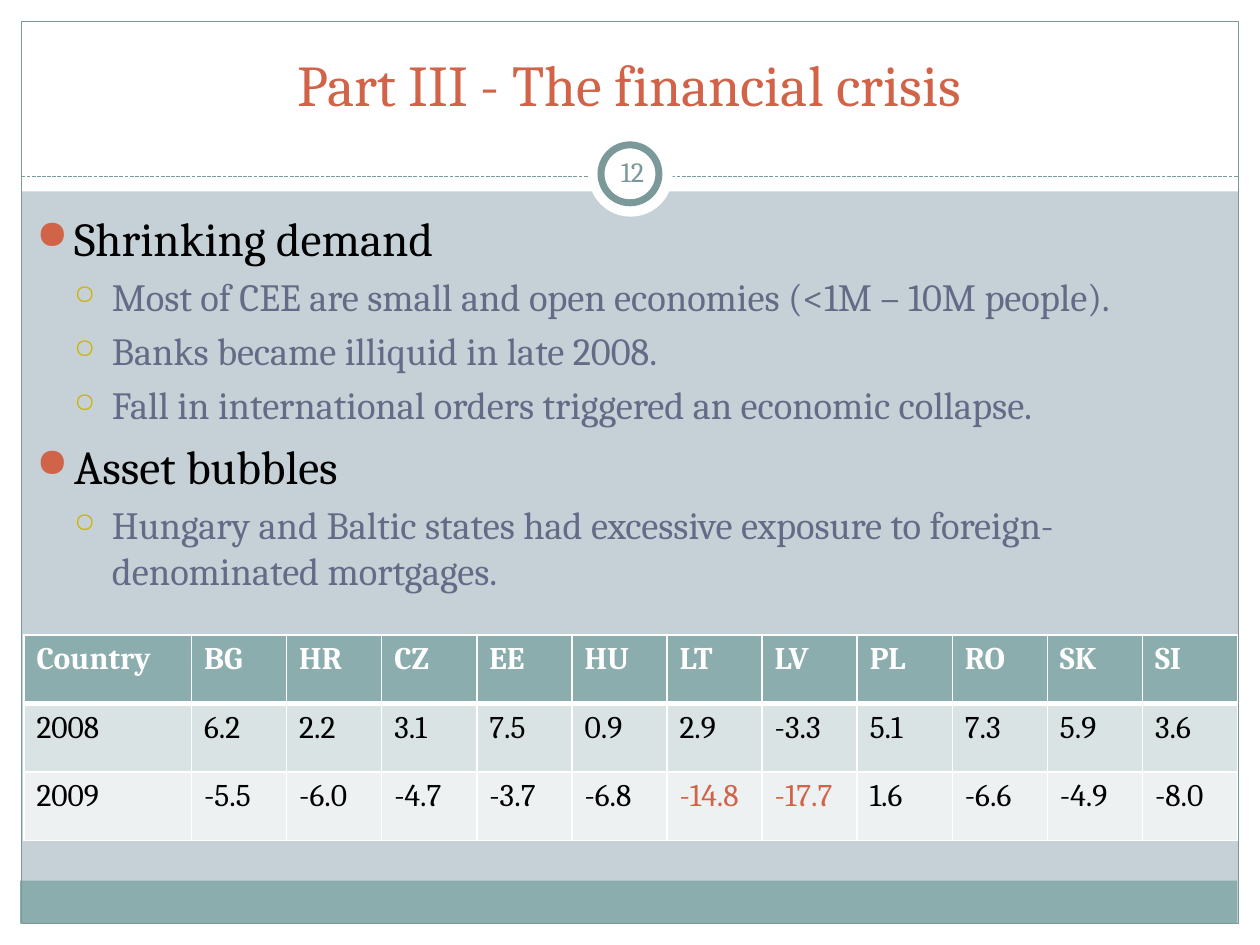
from lxml import etree
from pptx import Presentation
from pptx import util as u
from pptx.dml.color import RGBColor
from pptx.enum import dml, shapes, text
from pptx.oxml import ns

WHITE = RGBColor(0xFF, 0xFF, 0xFF)
BLACK = RGBColor(0, 0, 0)
MIST = RGBColor(0xC5, 0xD1, 0xD7)
TEAL = RGBColor(0x8C, 0xAD, 0xAE)
EDGE = RGBColor(0x7C, 0x99, 0x9A)
RUST = RGBColor(0xD1, 0x63, 0x49)
GOLD = RGBColor(0xCC, 0xB4, 0x00)
SLATE = RGBColor(0x64, 0x6B, 0x86)
PALE = RGBColor(0xDA, 0xE3, 0xE3)
FAINT = RGBColor(0xEE, 0xF1, 0xF2)
FONT = "Cambria"

TITLE = "Part III - The financial crisis"
NUMBER = "12"
POINTS = [
    (0, "Shrinking demand"),
    (1, "Most of CEE are small and open economies (<1M – 10M people)."),
    (1, "Banks became illiquid in late 2008."),
    (1, "Fall in international orders triggered an economic collapse."),
    (0, "Asset bubbles"),
    (1, "Hungary and Baltic states had excessive exposure to foreign-denominated mortgages."),
]
LEVELS = [
    dict(size=27, color=BLACK, mark="●", tint=RUST, scale=85),
    dict(size=22, color=SLATE, mark="○", tint=GOLD, scale=70),
]
GROWTH = [
    ["Country", "BG", "HR", "CZ", "EE", "HU", "LT", "LV", "PL", "RO", "SK", "SI"],
    ["2008", "6.2", "2.2", "3.1", "7.5", "0.9", "2.9", "-3.3", "5.1", "7.3", "5.9", "3.6"],
    ["2009", "-5.5", "-6.0", "-4.7", "-3.7", "-6.8", "-14.8", "-17.7", "1.6", "-6.6", "-4.9", "-8.0"],
]
FILLS = [TEAL, PALE, FAINT]
WORST = {"-14.8", "-17.7"}

RECT, OVAL = shapes.MSO_SHAPE.RECTANGLE, shapes.MSO_SHAPE.OVAL
FRAME = [
    (RECT, (0, 7.33, 10, 0.17), WHITE, None),
    (RECT, (0, 0, 10, 1.52), WHITE, None),
    (RECT, (0, 0, 0.17, 7.5), WHITE, None),
    (RECT, (9.83, 0, 0.17, 7.5), WHITE, None),
    (RECT, (0.16, 6.99, 9.66, 0.34), TEAL, None),
    (RECT, (0.17, 0.17, 9.66, 7.16), None, 0.75),
]
BADGE = [
    (OVAL, (4.67, 1.05, 0.67, 0.67), WHITE, None),
    (OVAL, (4.77, 1.15, 0.46, 0.46), WHITE, 4),
]


def inches(box):
    return [u.Inches(v) for v in box]


def add_shape(slide, kind, box, fill, width):
    shape = slide.shapes.add_shape(kind, *inches(box))
    shape.shadow.inherit = False
    if fill is None:
        shape.fill.background()
    else:
        shape.fill.solid()
        shape.fill.fore_color.rgb = fill
    if width is None:
        shape.line.fill.background()
    else:
        shape.line.color.rgb = EDGE
        shape.line.width = u.Pt(width)


def add_rule(slide):
    rule = slide.shapes.add_connector(
        shapes.MSO_CONNECTOR.STRAIGHT, *inches((0.17, 1.4, 9.83, 1.4)))
    rule.line.color.rgb = EDGE
    rule.line.width = u.Pt(0.75)
    rule.line.dash_style = dml.MSO_LINE.SQUARE_DOT
    etree.SubElement(rule._element.spPr, ns.qn("a:effectLst"))


def add_run(para, words, size, color, bold=False):
    run = para.add_run()
    run.text = words
    run.font.name = FONT
    run.font.size = u.Pt(size)
    run.font.color.rgb = color
    run.font.bold = bold


def add_box(slide, box, anchor, inset=(0.1, 0.05)):
    frame = slide.shapes.add_textbox(*inches(box)).text_frame
    frame.word_wrap = True
    frame.vertical_anchor = anchor
    frame.margin_left = frame.margin_right = u.Inches(inset[0])
    frame.margin_top = frame.margin_bottom = u.Inches(inset[1])
    return frame


def add_label(slide, box, words, size, color, inset=(0.1, 0.05)):
    para = add_box(slide, box, text.MSO_ANCHOR.MIDDLE, inset).paragraphs[0]
    para.alignment = text.PP_ALIGN.CENTER
    add_run(para, words, size, color)


def add_bullet(para, level, style):
    props = para._p.get_or_add_pPr()
    props.set("marL", str(u.Inches(0.3 * (level + 1))))
    props.set("indent", str(u.Inches(-0.3)))
    tint = etree.SubElement(props, ns.qn("a:buClr"))
    etree.SubElement(tint, ns.qn("a:srgbClr"), val=str(style["tint"]))
    etree.SubElement(props, ns.qn("a:buSzPct"), val=str(style["scale"] * 1000))
    etree.SubElement(props, ns.qn("a:buChar"), char=style["mark"])


def add_points(slide):
    frame = add_box(slide, (0.19, 1.61, 9.63, 5.06), text.MSO_ANCHOR.TOP)
    for i, (level, words) in enumerate(POINTS):
        para = frame.paragraphs[0] if i == 0 else frame.add_paragraph()
        style = LEVELS[level]
        para.level = level
        para.space_before = u.Pt(style["size"] * 0.2)
        add_bullet(para, level, style)
        add_run(para, words, style["size"], style["color"])


def add_border(cell, side, width):
    props = cell._tc.get_or_add_tcPr()
    line = etree.SubElement(props, ns.qn("a:ln" + side), w=str(u.Pt(width)))
    fill = etree.SubElement(line, ns.qn("a:solidFill"))
    etree.SubElement(fill, ns.qn("a:srgbClr"), val=str(WHITE))


def add_growth(slide):
    rows, cols = len(GROWTH), len(GROWTH[0])
    table = slide.shapes.add_table(
        rows, cols, *inches((0.19, 5.04, 9.63, 1.63))).table
    for c, col in enumerate(table.columns):
        col.width = u.Inches(0.755 if c else 1.33)
    for r, row in enumerate(GROWTH):
        table.rows[r].height = u.Inches(1.63 / rows)
        for c, value in enumerate(row):
            cell = table.cell(r, c)
            for side in "LRTB":
                heavy = (r, side) in ((0, "B"), (1, "T"))
                add_border(cell, side, 3 if heavy else 1)
            cell.fill.solid()
            cell.fill.fore_color.rgb = FILLS[r]
            color = WHITE if r == 0 else RUST if value in WORST else BLACK
            add_run(cell.text_frame.paragraphs[0], value, 18, color, r == 0)


def main():
    deck = Presentation()
    deck.slide_width, deck.slide_height = inches((10, 7.5))
    slide = deck.slides.add_slide(deck.slide_layouts[6])
    slide.background.fill.solid()
    slide.background.fill.fore_color.rgb = MIST
    for part in FRAME:
        add_shape(slide, *part)
    add_rule(slide)
    for part in BADGE:
        add_shape(slide, *part)
    add_label(slide, (0.33, 0.25, 9.33, 0.83), TITLE, 33, RUST)
    add_label(slide, (4.77, 1.12, 0.5, 0.48), NUMBER, 16, EDGE, (0.05, 0.05))
    add_points(slide)
    add_growth(slide)
    deck.save("out.pptx")


if __name__ == "__main__":
    main()
